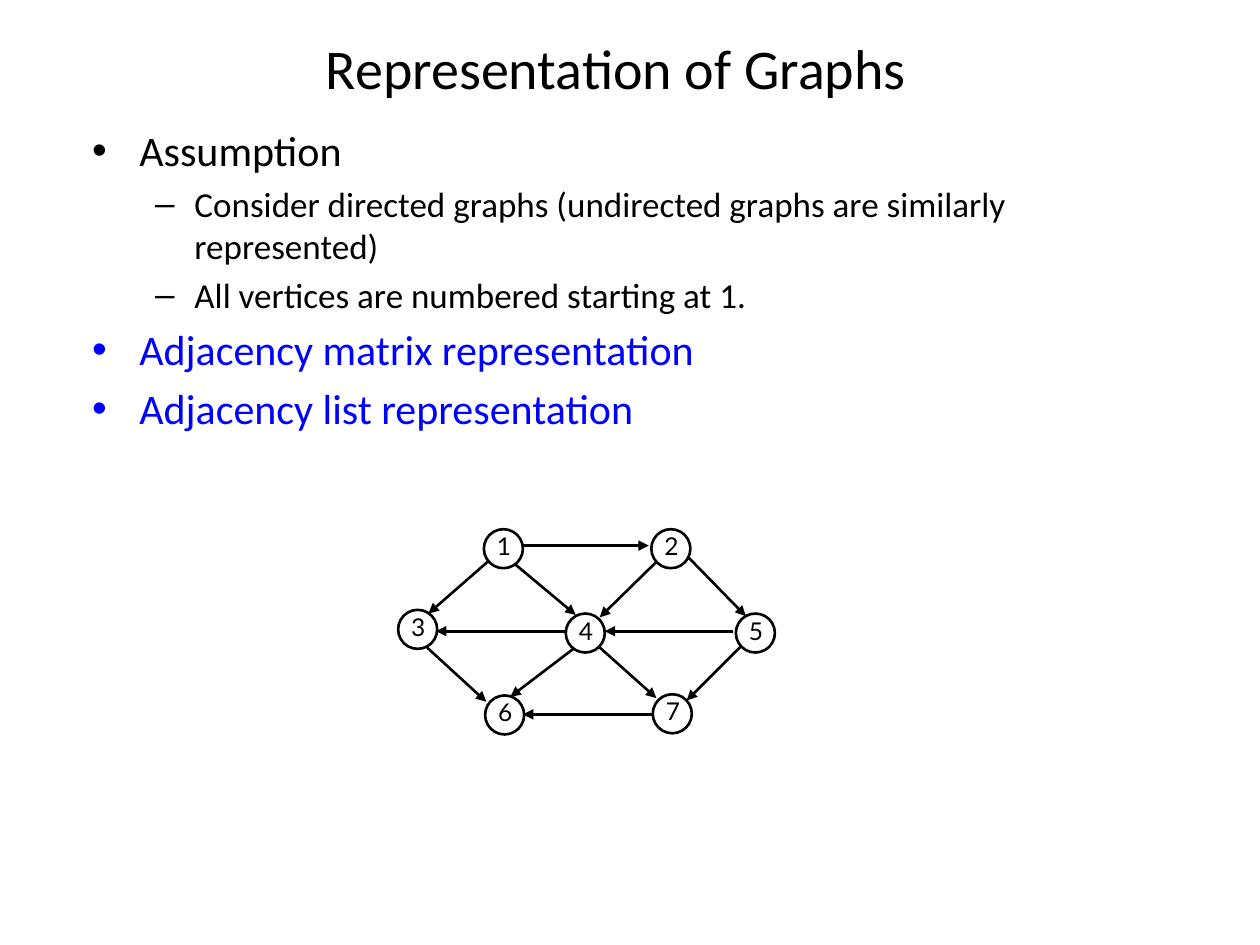
from dataclasses import dataclass

from lxml import etree
from pptx import Presentation
from pptx.dml.color import RGBColor
from pptx.enum import shapes, text
from pptx.oxml.ns import qn
from pptx.util import Pt

COLORS = {"ink": "000000", "highlight": "0000FF"}
BODY_FONT, LABEL_FONT = "Calibri", "Lato"
VERTEX_SIZE = 22.3
LINE_WIDTH = 1.5


@dataclass(frozen=True)
class Bullet:
    wording: str
    level: int = 0
    size: float = 24
    color: str = "ink"


@dataclass(frozen=True)
class Vertex:
    number: int
    left: float
    top: float


@dataclass(frozen=True)
class Edge:
    x1: float
    y1: float
    x2: float
    y2: float


BULLETS = [
    Bullet("Assumption"),
    Bullet("Consider directed graphs (undirected graphs are similarly represented)", 1, 20),
    Bullet("All vertices are numbered starting at 1.", 1, 20),
    Bullet("Adjacency matrix representation", color="highlight"),
    Bullet("Adjacency list representation", color="highlight"),
]

VERTICES = [
    Vertex(1, 276.5, 302.4),
    Vertex(3, 227.5, 348.5),
    Vertex(6, 277.2, 397.4),
    Vertex(4, 323.3, 350.6),
    Vertex(2, 372.2, 302.4),
    Vertex(7, 373, 396.7),
    Vertex(5, 420.5, 350.6),
]

EDGES = [
    Edge(278.6, 321.1, 244.8, 350.6),  # 1 to 3
    Edge(244.1, 370.1, 277.9, 401),  # 3 to 6
    Edge(298.8, 311.8, 370.8, 311.8),  # 1 to 2
    Edge(393.1, 318.2, 426.2, 352.1),  # 2 to 5
    Edge(423.4, 369.4, 392.4, 400.3),  # 5 to 7
    Edge(375.1, 321.1, 342.7, 352.8),  # 2 to 4
    Edge(419, 360.7, 345.6, 360.7),  # 5 to 4
    Edge(342, 369.4, 375.1, 398.9),  # 4 to 7
    Edge(373, 408.2, 298.8, 408.2),  # 7 to 6
    Edge(323.3, 360.7, 249.1, 360.7),  # 4 to 3
    Edge(327.6, 370.8, 291.6, 398.2),  # 4 to 6
    Edge(294.5, 322.6, 329, 351.4),  # 1 to 4
]


def place(shape, left: float, top: float, width: float, height: float) -> None:
    shape.left, shape.top = Pt(left), Pt(top)
    shape.width, shape.height = Pt(width), Pt(height)


def add_run(paragraph, wording: str, size: float, font: str, color: str = "ink") -> None:
    run = paragraph.add_run()
    run.text = wording
    run.font.size = Pt(size)
    run.font.name = font
    run.font.color.rgb = RGBColor.from_string(COLORS[color])


def format_line(line) -> None:
    line.color.rgb = RGBColor.from_string(COLORS["ink"])
    line.width = Pt(LINE_WIDTH)


def fill_title(slide) -> None:
    title = slide.shapes.title
    place(title, 46, 14.4, 612, 48)
    title.text_frame.auto_size = text.MSO_AUTO_SIZE.NONE
    add_run(title.text_frame.paragraphs[0], "Representation of Graphs", 32, BODY_FONT)


def fill_body(slide, bullets: list[Bullet]) -> None:
    body = slide.placeholders[1]
    place(body, 45.4, 67.7, 643, 407.5)
    frame = body.text_frame
    frame.auto_size = text.MSO_AUTO_SIZE.NONE
    for index, bullet in enumerate(bullets):
        paragraph = frame.add_paragraph() if index else frame.paragraphs[0]
        paragraph.level = bullet.level
        add_run(paragraph, bullet.wording, bullet.size, BODY_FONT, bullet.color)


def draw_vertex(group, vertex: Vertex) -> None:
    """Draw the circle, then its number in a text box set slightly higher."""
    circle = group.shapes.add_shape(
        shapes.MSO_SHAPE.OVAL,
        Pt(vertex.left), Pt(vertex.top), Pt(VERTEX_SIZE), Pt(VERTEX_SIZE),
    )
    circle.shadow.inherit = False
    circle.fill.background()
    format_line(circle.line)

    label = group.shapes.add_textbox(
        Pt(vertex.left + 0.4), Pt(vertex.top - 2.4), Pt(VERTEX_SIZE), Pt(24.5)
    )
    label.text_frame.word_wrap = False
    label.text_frame.auto_size = text.MSO_AUTO_SIZE.SHAPE_TO_FIT_TEXT
    add_run(label.text_frame.paragraphs[0], str(vertex.number), 14, LABEL_FONT)


def draw_edge(group, edge: Edge) -> None:
    connector = group.shapes.add_connector(
        shapes.MSO_CONNECTOR.STRAIGHT,
        Pt(edge.x1), Pt(edge.y1), Pt(edge.x2), Pt(edge.y2),
    )
    format_line(connector.line)
    etree.SubElement(connector.line._get_or_add_ln(), qn("a:tailEnd"), type="triangle")
    etree.SubElement(connector._element.spPr, qn("a:effectLst"))


def main() -> None:
    presentation = Presentation()
    presentation.slide_width, presentation.slide_height = Pt(720), Pt(540)
    slide = presentation.slides.add_slide(presentation.slide_layouts[1])
    fill_title(slide)
    fill_body(slide, BULLETS)
    graph = slide.shapes.add_group_shape()
    for vertex in VERTICES:
        draw_vertex(graph, vertex)
    for edge in EDGES:
        draw_edge(graph, edge)
    presentation.save("out.pptx")


if __name__ == "__main__":
    main()
